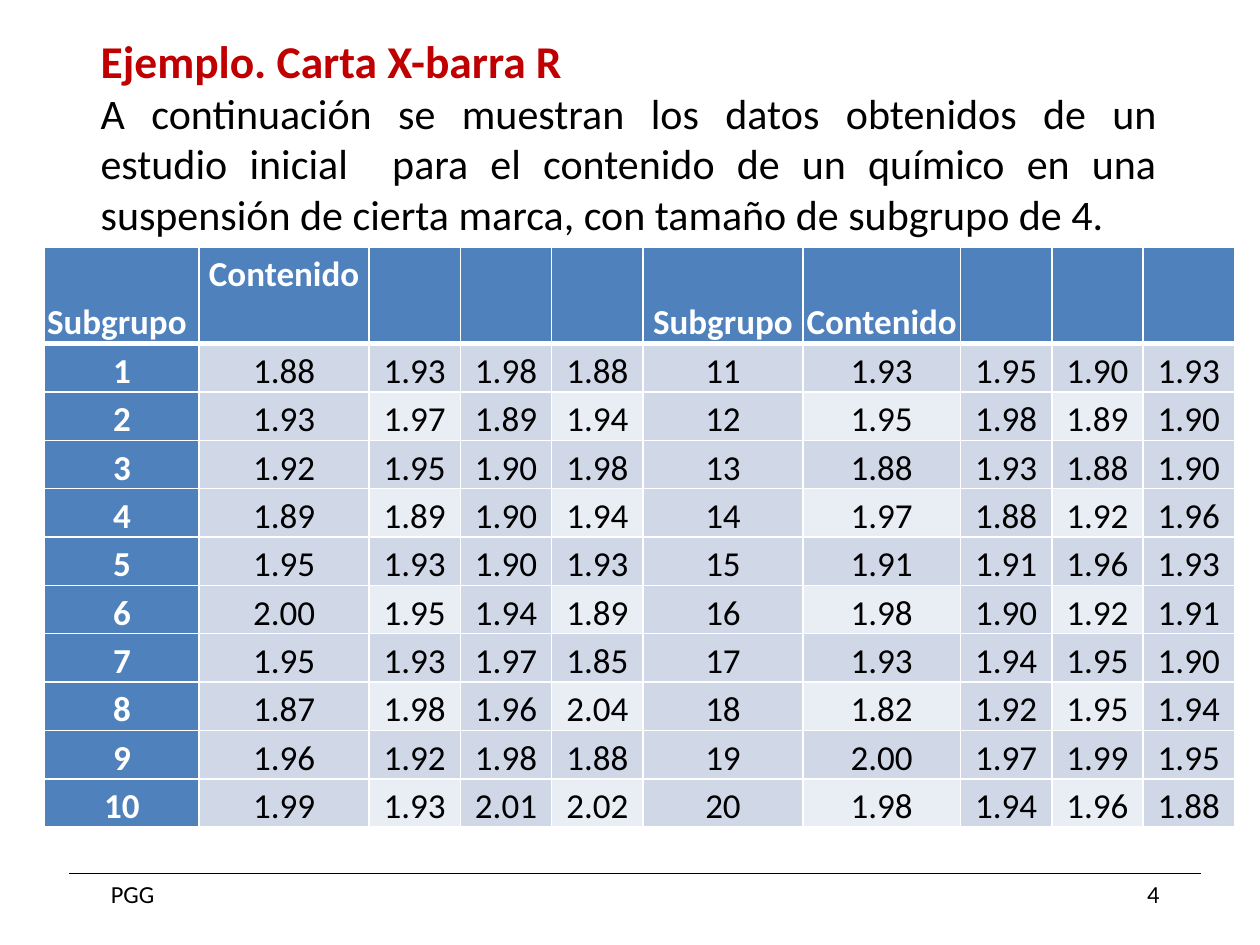
from lxml.etree import SubElement
from pptx import Presentation
from pptx.dml.color import RGBColor
from pptx.enum.shapes import MSO_CONNECTOR as Connector
from pptx.enum.text import MSO_ANCHOR as Anchor, PP_ALIGN as Align
from pptx.oxml.ns import qn
from pptx.util import Pt

BLACK = RGBColor(0x00, 0x00, 0x00)
WHITE = RGBColor(0xFF, 0xFF, 0xFF)
RED = RGBColor(0xC0, 0x00, 0x00)
BLUE = RGBColor(0x4F, 0x81, 0xBD)
BAND_DARK = RGBColor(0xD0, 0xD8, 0xE8)
BAND_LIGHT = RGBColor(0xE9, 0xED, 0xF4)

FONT = "Calibri"
INTRODUCTION = (
    "A continuación se muestran los datos obtenidos de un estudio inicial  "
    "para el contenido de un químico en una suspensión de cierta marca, "
    "con tamaño de subgrupo de 4."
)

MEASURE_WIDTHS = [52.2] * 3
COLUMN_WIDTHS = [88.3, 97.1, *MEASURE_WIDTHS, 91.4, 90, *MEASURE_WIDTHS]
HEADER_HEIGHT = 55.2
ROW_HEIGHT = 27.6
HEADERS = ["Subgrupo", "Contenido", "", "", ""] * 2
MEASUREMENTS = """
1.88 1.93 1.98 1.88
1.93 1.97 1.89 1.94
1.92 1.95 1.90 1.98
1.89 1.89 1.90 1.94
1.95 1.93 1.90 1.93
2.00 1.95 1.94 1.89
1.95 1.93 1.97 1.85
1.87 1.98 1.96 2.04
1.96 1.92 1.98 1.88
1.99 1.93 2.01 2.02
1.93 1.95 1.90 1.93
1.95 1.98 1.89 1.90
1.88 1.93 1.88 1.90
1.97 1.88 1.92 1.96
1.91 1.91 1.96 1.93
1.98 1.90 1.92 1.91
1.93 1.94 1.95 1.90
1.82 1.92 1.95 1.94
2.00 1.97 1.99 1.95
1.98 1.94 1.96 1.88
"""


def write_text(paragraph, text, size, color=BLACK, bold=False,
               align=Align.LEFT, line_spacing=None):
    paragraph.text = text
    paragraph.alignment = align
    paragraph.line_spacing = line_spacing
    font = paragraph.font
    font.name, font.size, font.bold = FONT, Pt(size), bold
    font.color.rgb = color


def add_text_frame(slide, left, top, width, height):
    box = slide.shapes.add_textbox(Pt(left), Pt(top), Pt(width), Pt(height))
    box.text_frame.word_wrap = True
    return box.text_frame


def add_heading(slide):
    frame = add_text_frame(slide, 50.4, 15.1, 617.8, 126)
    write_text(frame.paragraphs[0], "Ejemplo. Carta X-barra R", 26,
               color=RED, bold=True, align=Align.JUSTIFY)
    write_text(frame.add_paragraph(), INTRODUCTION, 24, align=Align.JUSTIFY)


def add_footer(slide):
    top = 499
    for left, text, align in [(56.2, "PGG", Align.LEFT), (512, "4", Align.RIGHT)]:
        frame = add_text_frame(slide, left, top, 157.7, 24.5)
        write_text(frame.paragraphs[0], text, 14, align=align)
    rule = slide.shapes.add_connector(
        Connector.STRAIGHT, Pt(39.6), Pt(top), Pt(686.2), Pt(top))
    rule.line.color.rgb = BLACK
    rule.line.width = Pt(0.75)
    SubElement(rule._element.spPr, qn("a:effectLst"))


def set_borders(cell, row):
    """White grid, with a heavier line under the header."""
    widths = {"L": 1, "R": 1, "T": 3 if row == 1 else 1, "B": 3 if row == 0 else 1}
    properties = cell._tc.get_or_add_tcPr()
    for side, width in widths.items():
        line = SubElement(properties, qn(f"a:ln{side}"), w=str(Pt(width)))
        fill = SubElement(line, qn("a:solidFill"))
        SubElement(fill, qn("a:srgbClr"), val=str(WHITE))


def cell_color(row, column):
    if row == 0 or column == 0:
        return BLUE
    return BAND_LIGHT if row % 2 == 0 and column % 2 == 0 else BAND_DARK


def format_cell(cell, text, row, column):
    fill_color = cell_color(row, column)
    emphasized = fill_color == BLUE
    set_borders(cell, row)
    cell.fill.solid()
    cell.fill.fore_color.rgb = fill_color
    cell.margin_left = cell.margin_right = Pt(1.4)
    cell.margin_top = cell.margin_bottom = 0
    if row == 0 and column != 1:
        cell.vertical_anchor = Anchor.BOTTOM
    write_text(cell.text_frame.paragraphs[0], text, 20,
               color=WHITE if emphasized else BLACK, bold=emphasized,
               align=Align.LEFT if row == column == 0 else Align.CENTER,
               line_spacing=1.15)


def table_rows():
    """Header, then subgroups 1 to 10 beside subgroups 11 to 20."""
    subgroups = [[str(number), *line.split()] for number, line
                 in enumerate(MEASUREMENTS.strip().splitlines(), start=1)]
    half = len(subgroups) // 2
    return [HEADERS] + [left + right for left, right
                        in zip(subgroups[:half], subgroups[half:])]


def add_subgroup_table(slide):
    rows = table_rows()
    heights = [HEADER_HEIGHT] + [ROW_HEIGHT] * (len(rows) - 1)
    table = slide.shapes.add_table(
        len(rows), len(COLUMN_WIDTHS), Pt(25.5), Pt(141.1),
        Pt(sum(COLUMN_WIDTHS)), Pt(sum(heights))).table
    for column, width in zip(table.columns, COLUMN_WIDTHS):
        column.width = Pt(width)
    for row, (texts, height) in enumerate(zip(rows, heights)):
        table.rows[row].height = Pt(height)
        for column, text in enumerate(texts):
            format_cell(table.cell(row, column), text, row, column)


def main():
    presentation = Presentation()
    presentation.slide_width, presentation.slide_height = Pt(720), Pt(540)
    slide = presentation.slides.add_slide(presentation.slide_layouts[6])
    add_footer(slide)
    add_subgroup_table(slide)
    add_heading(slide)
    presentation.save("out.pptx")


if __name__ == "__main__":
    main()
